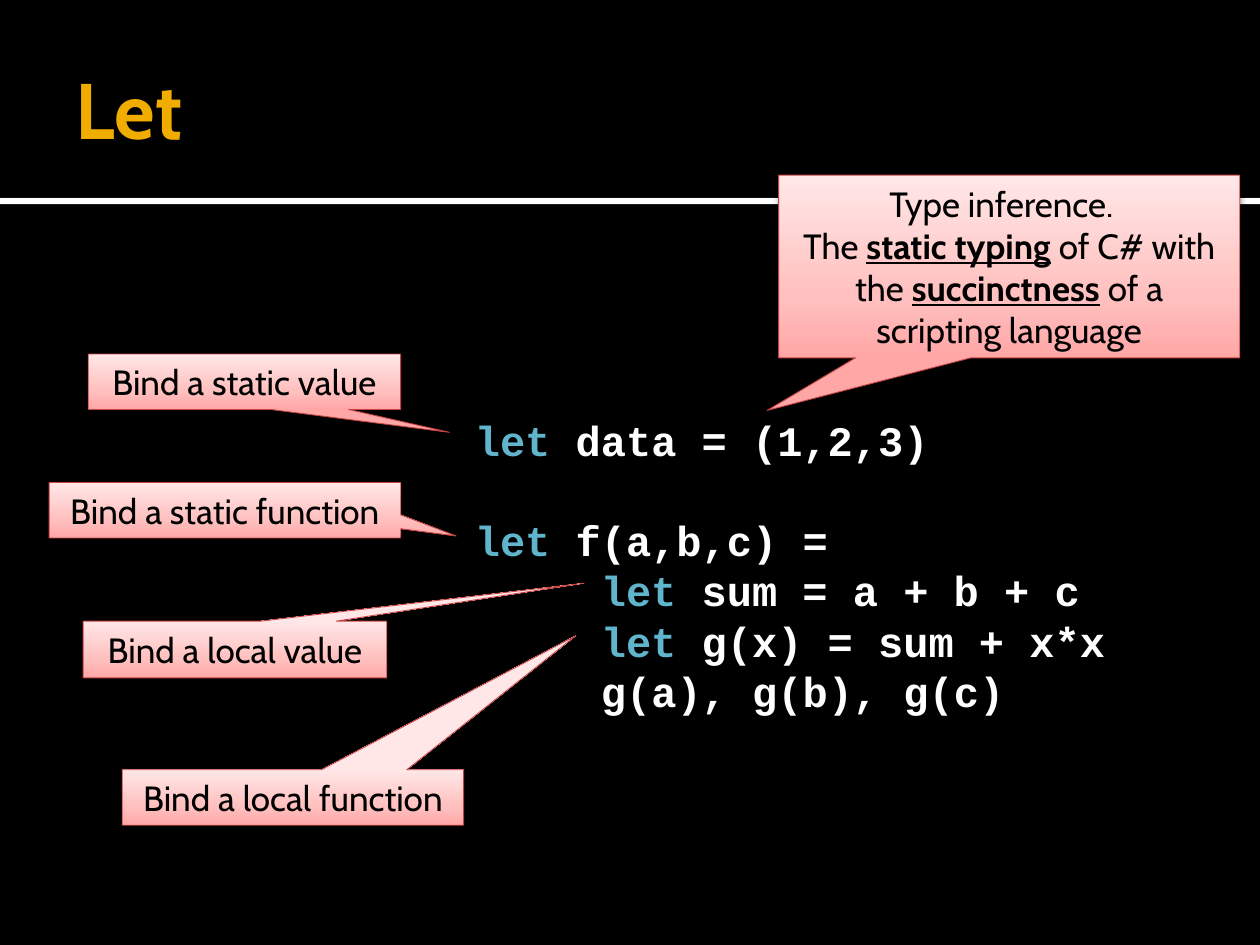
"""Build the slide on let bindings, with callouts around a code sample."""
from dataclasses import dataclass

from lxml import etree
from pptx import Presentation
from pptx.dml.color import RGBColor
from pptx.enum.shapes import MSO_SHAPE as Shape
from pptx.enum.text import MSO_ANCHOR as Anchor, MSO_AUTO_SIZE as AutoSize, PP_ALIGN as Align
from pptx.oxml import parse_xml
from pptx.oxml.ns import nsdecls, qn
from pptx.util import Inches, Pt


@dataclass(frozen=True)
class Theme:
    background: str = "000000"
    rule: str = "FFFFFF"
    title: str = "F0AD00"
    code: str = "FFFFFF"
    keyword: str = "60B5CC"
    callout_text: str = "000000"
    callout_line: str = "C54342"
    callout_stops: tuple = ((0, "FFA7A7"), (35, "FFC1C0"), (100, "FFE7E7"))
    body_font: str = "Cabin"
    code_font: str = "Courier New"
    title_size: int = 45
    code_size: int = 24
    code_pitch: float = 28.7
    callout_size: int = 20


class SlideBuilder:
    def __init__(self, slide, theme):
        self.slide = slide
        self.theme = theme
        fill = slide.background.fill
        fill.solid()
        fill.fore_color.rgb = RGBColor.from_string(theme.background)

    def add_run(self, paragraph, text, font_name, size, color, bold=False, underline=False):
        run = paragraph.add_run()
        run.text = text
        font = run.font
        font.name, font.size = font_name, Pt(size)
        font.bold, font.underline = bold, underline
        font.color.rgb = RGBColor.from_string(color)

    def add_box(self, kind, bounds, color):
        shape = self.slide.shapes.add_shape(kind, *map(Inches, bounds))
        shape.shadow.inherit = False
        shape.fill.solid()
        shape.fill.fore_color.rgb = RGBColor.from_string(color)
        shape.line.fill.background()
        return shape

    def set_shadow(self, shape, opacity, blur, distance):
        effects = shape._element.spPr.find(qn("a:effectLst"))
        shadow = etree.SubElement(effects, qn("a:outerShdw"), blurRad=str(Pt(blur)),
                                  dist=str(Pt(distance)), dir="5400000", rotWithShape="0")
        color = etree.SubElement(shadow, qn("a:srgbClr"), val="000000")
        etree.SubElement(color, qn("a:alpha"), val=str(opacity * 1000))

    def set_gradient(self, shape):
        stops = "".join(
            f'<a:gs pos="{position * 1000}"><a:srgbClr val="{color}"/></a:gs>'
            for position, color in self.theme.callout_stops)
        gradient = parse_xml(
            f'<a:gradFill {nsdecls("a")} rotWithShape="1"><a:gsLst>{stops}</a:gsLst>'
            '<a:lin ang="16200000" scaled="1"/></a:gradFill>')
        properties = shape._element.spPr
        properties.replace(properties.find(qn("a:solidFill")), gradient)

    def add_header(self, text):
        theme = self.theme
        rule = self.add_box(Shape.RECTANGLE, (0, 1.57, 10, 0.05), theme.rule)
        self.set_shadow(rule, 60, 2.5, 0.8)
        self.add_box(Shape.RECTANGLE, (0, 0, 10, 1.57), theme.background)
        title = self.slide.shapes.title
        self.slide.shapes._spTree.append(title._element)
        title.left, title.top, title.width, title.height = map(Inches, (0.5, 0.17, 9, 1.37))
        frame = title.text_frame
        frame.vertical_anchor = Anchor.MIDDLE
        frame.margin_left = Inches(0.1)
        frame.margin_right = frame.margin_top = frame.margin_bottom = Inches(0.05)
        paragraph = frame.paragraphs[0]
        paragraph.alignment = Align.LEFT
        self.add_run(paragraph, text, theme.body_font, theme.title_size, theme.title, bold=True)

    def add_code(self, bounds, blocks):
        theme = self.theme
        shape = self.add_box(Shape.RECTANGLE, bounds, theme.background)
        shape.line.color.rgb = RGBColor.from_string(theme.background)
        shape.line.width = Pt(3.78)
        frame = shape.text_frame
        frame.word_wrap = False
        frame.auto_size = AutoSize.NONE
        frame.vertical_anchor = Anchor.TOP
        frame.margin_top = Inches(0.09)
        paragraph = None
        for block in blocks:
            for index, line in enumerate(block):
                is_first = paragraph is None
                paragraph = frame.paragraphs[0] if is_first else frame.add_paragraph()
                paragraph.alignment = Align.LEFT
                paragraph.line_spacing = Pt(theme.code_pitch)
                if index == 0 and not is_first:
                    paragraph.space_before = Pt(theme.code_pitch)
                indent, keyword, rest = line.partition("let")
                parts = ((indent, theme.code), (keyword, theme.keyword), (rest, theme.code))
                for text, color in parts:
                    if text:
                        self.add_run(paragraph, text, theme.code_font, theme.code_size,
                                     color, bold=True)

    def add_callout(self, bounds, pointer, paragraphs, wrap=False):
        theme = self.theme
        shape = self.add_box(Shape.RECTANGULAR_CALLOUT, bounds, theme.background)
        shape.adjustments[0], shape.adjustments[1] = pointer
        self.set_gradient(shape)
        shape.line.color.rgb = RGBColor.from_string(theme.callout_line)
        shape.line.width = Pt(0.5)
        self.set_shadow(shape, 38, 3.5, 2)
        frame = shape.text_frame
        frame.word_wrap = wrap
        frame.auto_size = AutoSize.SHAPE_TO_FIT_TEXT
        frame.vertical_anchor = Anchor.MIDDLE
        for index, runs in enumerate(paragraphs):
            paragraph = frame.add_paragraph() if index else frame.paragraphs[0]
            paragraph.alignment = Align.CENTER
            for text, stressed in runs:
                self.add_run(paragraph, text, theme.body_font, theme.callout_size,
                             theme.callout_text, bold=stressed, underline=stressed)


CODE_BLOCKS = (
    ("let data = (1,2,3)",),
    ("let f(a,b,c) =",
     "     let sum = a + b + c",
     "     let g(x) = sum + x*x",
     "     g(a), g(b), g(c)"),
)

BINDINGS = (
    ("Bind a static value", (0.7, 2.81, 2.48, 0.44), (0.656, 0.913)),
    ("Bind a static function", (0.39, 3.83, 2.79, 0.44), (0.658, 0.465)),
    ("Bind a local value", (0.66, 4.93, 2.41, 0.45), (1.15, -1.17)),
    ("Bind a local function", (0.97, 6.11, 2.71, 0.44), (0.829, -2.92)),
)

TYPE_INFERENCE = (
    (("Type inference.  ", False),),
    (("The ", False), ("static typing", True), (" of C# with the ", False),
     ("succinctness", True), (" of a scripting language", False)),
)


def main():
    presentation = Presentation()
    presentation.slide_width, presentation.slide_height = Inches(10), Inches(7.5)
    slide = presentation.slides.add_slide(presentation.slide_layouts[5])
    builder = SlideBuilder(slide, Theme())
    builder.add_header("Let")
    builder.add_code((3.67, 3.2, 5.65, 2.93), CODE_BLOCKS)
    for text, bounds, pointer in BINDINGS:
        builder.add_callout(bounds, pointer, (((text, False),),))
    builder.add_callout((6.18, 1.39, 3.66, 1.45), (-0.525, 0.788), TYPE_INFERENCE, wrap=True)
    presentation.save("out.pptx")


if __name__ == "__main__":
    main()
